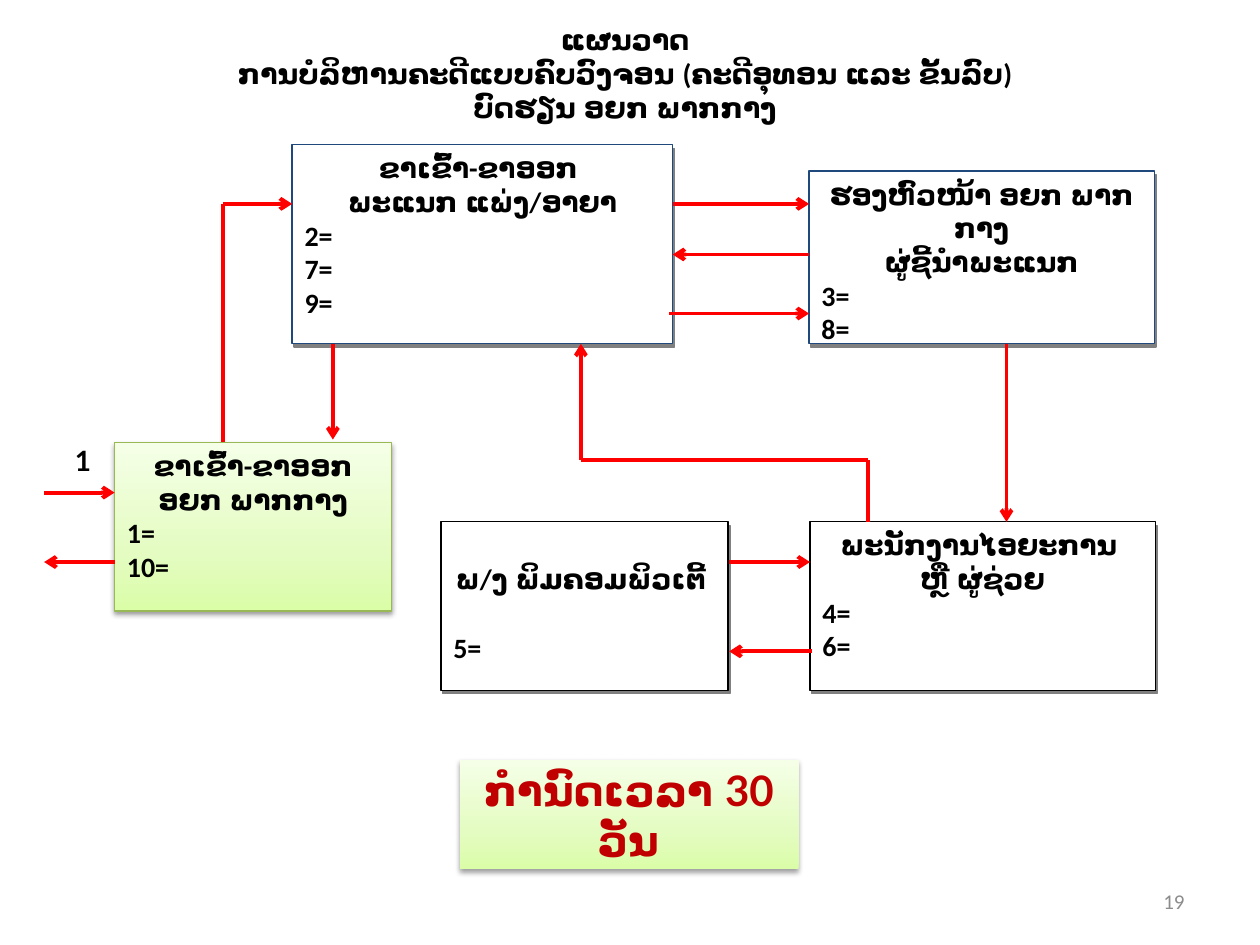
import pptx
import pptx.dml.color
import pptx.enum.shapes
import pptx.enum.text
import pptx.oxml.ns
import pptx.util
from itertools import pairwise
from lxml import etree

Cm, Pt = pptx.util.Cm, pptx.util.Pt
RGBColor = pptx.dml.color.RGBColor
SHAPE = pptx.enum.shapes.MSO_SHAPE
ALIGN = pptx.enum.text.PP_ALIGN
ANCHOR = pptx.enum.text.MSO_ANCHOR
qn = pptx.oxml.ns.qn

BLACK = RGBColor(0x00, 0x00, 0x00)
WHITE = RGBColor(0xFF, 0xFF, 0xFF)
NAVY = RGBColor(0x1F, 0x49, 0x7D)
RED = RGBColor(0xFF, 0x00, 0x00)
DARK_RED = RGBColor(0xC0, 0x00, 0x00)
OLIVE = RGBColor(0x98, 0xB9, 0x55)
GRAY = RGBColor(0x80, 0x80, 0x80)
NUMBER_GRAY = RGBColor(0x8C, 0x8C, 0x8C)
# Green gradient, bottom to top: position in percent, colour
GREEN_STOPS = [
    (0, RGBColor(0xDA, 0xFD, 0xA7)),
    (35, RGBColor(0xE4, 0xFC, 0xC2)),
    (100, RGBColor(0xF5, 0xFF, 0xE7)),
]
# Shadow: colour, opacity percent, blur pt, distance pt, angle
SOFT_SHADOW = (BLACK, 38, 3.1, 1.6, 90)
HARD_SHADOW = (GRAY, 100, 0, 2.2, 63)

# Content; all positions in centimetres (left, top, width, height)
TITLE = ("ແຜນວາດ\vການບໍລິຫານຄະດີແບບຄົບວົງຈອນ (ຄະດີອຸທອນ ແລະ ຂັ້ນລົບ)\v"
         "ບົດຮຽນ ອຍກ ພາກກາງ")
TITLE_AREA = (3.1, 0.53, 19, 2.59)

# Boxes: area, border, green or white, centred headings, numbered steps
BOXES = [
    ((2.31, 8.92, 5.59, 3.4), OLIVE, True,
     ["ຂາເຂົ້າ-ຂາອອກ", "ອຍກ ພາກກາງ"], ["1=", "10="]),
    ((5.89, 2.92, 7.67, 4.01), NAVY, False,
     ["ຂາເຂົ້າ-ຂາອອກ ", "ພະແນກ ແພ່ງ/ອາຍາ"], ["2=", "7=", "9="]),
    ((16.33, 10.52, 6.96, 3.4), BLACK, False,
     ["ພະນັກງານໄອຍະການ ", "ຫຼື ຜູ່ຊ່ວຍ"], ["4=", "6="]),
    ((16.31, 3.45, 6.96, 3.48), NAVY, False,
     ["ຮອງຫົວໜ້າ ອຍກ ພາກກາງ", "ຜູ່ຊີ້ນໍາພະແນກ"], ["3=", "8="]),
    ((8.89, 10.52, 5.79, 3.4), BLACK, False,
     ["ພ/ງ ພິມຄອມພິວເຕີ້ "], ["5="]),
]

# Routes: corner points, the last one carries the arrowhead
ROUTES = [
    [(4.5, 8.92), (4.5, 4.11), (5.89, 4.11)],
    [(17.5, 10.52), (17.5, 9.27), (11.71, 9.27), (11.71, 6.93)],
    [(20.29, 6.93), (20.29, 10.52)],
    [(6.71, 6.93), (6.71, 8.86)],
    [(13.56, 4.11), (16.31, 4.11)],
    [(16.31, 5.13), (13.56, 5.13)],
    [(13.49, 6.32), (16.31, 6.32)],
    [(0.89, 9.93), (2.31, 9.93)],
    [(2.31, 11.33), (0.89, 11.33)],
    [(14.7, 11.33), (16.33, 11.33)],
    [(16.36, 13.13), (14.7, 13.13)],
]


def write(shape, lines, size, color, font="Calibri", bold=True,
          anchor=ANCHOR.MIDDLE):
    """Fill a shape with (text, alignment) lines in one style."""
    frame = shape.text_frame
    frame.word_wrap = True
    frame.vertical_anchor = anchor
    for index, (text, alignment) in enumerate(lines):
        paragraph = frame.add_paragraph() if index else frame.paragraphs[0]
        paragraph.text = text
        paragraph.alignment = alignment
        paragraph.font.name = font
        paragraph.font.size = Pt(size)
        paragraph.font.bold = bold
        paragraph.font.color.rgb = color
    return frame


def add_color(parent, color):
    return etree.SubElement(parent, qn("a:srgbClr"), val=str(color))


def add_shadow(shape, color, opacity, blur, distance, angle):
    shape.shadow.inherit = False
    effects = shape.element.spPr.find(qn("a:effectLst"))
    outer = etree.SubElement(
        effects, qn("a:outerShdw"), blurRad=str(Pt(blur)), dist=str(Pt(distance)),
        dir=str(angle * 60000), algn="ctr", rotWithShape="0")
    etree.SubElement(add_color(outer, color), qn("a:alpha"), val=str(opacity * 1000))


def add_panel(shapes, area, border, green):
    panel = shapes.add_shape(SHAPE.RECTANGLE, *map(Cm, area))
    if green:
        panel.fill.gradient()
        panel.fill.gradient_angle = 90
        stops = panel.element.spPr.find(".//" + qn("a:gsLst"))
        stops.clear()
        for position, color in GREEN_STOPS:
            add_color(etree.SubElement(stops, qn("a:gs"), pos=str(position * 1000)),
                      color)
    else:
        panel.fill.solid()
        panel.fill.fore_color.rgb = WHITE
    if border is None:
        panel.line.fill.background()
    else:
        panel.line.color.rgb = border
        panel.line.width = Pt(0.75)
    add_shadow(panel, *(SOFT_SHADOW if green else HARD_SHADOW))
    return panel


def add_route(shapes, points):
    for start, end in pairwise(points):
        connector = shapes.add_connector(
            pptx.enum.shapes.MSO_CONNECTOR.STRAIGHT, *map(Cm, start + end))
        connector.line.color.rgb = RED
        connector.line.width = Pt(2.25)
        properties = connector.element.spPr
        if end == points[-1]:
            etree.SubElement(properties.find(qn("a:ln")), qn("a:tailEnd"), type="arrow")
        etree.SubElement(properties, qn("a:effectLst"))


def main():
    presentation = pptx.Presentation()
    presentation.slide_width, presentation.slide_height = Cm(25.4), Cm(19.05)
    slide = presentation.slides.add_slide(presentation.slide_layouts[6])
    shapes = slide.shapes

    # Title, raised a little above the middle of its area
    title = shapes.add_textbox(*map(Cm, TITLE_AREA))
    frame = write(title, [(TITLE, ALIGN.CENTER)], 16.2, BLACK)
    frame.margin_top, frame.margin_bottom = Cm(0), Cm(0.69)

    # Process boxes
    for area, border, green, headings, steps in BOXES:
        panel = add_panel(shapes, area, border, green)
        lines = [(text, ALIGN.CENTER) for text in headings]
        lines += [(text, ALIGN.LEFT) for text in steps]
        frame = write(panel, lines, 16, BLACK, anchor=ANCHOR.TOP)
        if len(headings) == 1:
            frame.margin_top = Cm(0.8)
            frame.paragraphs[1].space_before = Pt(20)

    # Arrows between the boxes
    for points in ROUTES:
        add_route(shapes, points)

    # Label of the entry arrow
    label = shapes.add_shape(SHAPE.OVAL, Cm(1.04), Cm(8.74), Cm(1.27), Cm(1.07))
    label.fill.background()
    label.line.fill.background()
    label.shadow.inherit = False
    write(label, [("1", ALIGN.CENTER)], 16, BLACK, font="Lato")

    # Time limit
    limit = add_panel(shapes, (9.27, 15.32, 6.83, 2.21), None, True)
    write(limit, [("ກໍານົດເວລາ 30 ວັນ", ALIGN.CENTER)], 24, DARK_RED, font="Lato")

    # Slide number
    number = shapes.add_textbox(Cm(18.21), Cm(17.65), Cm(5.92), Cm(1.02))
    write(number, [("19", ALIGN.RIGHT)], 12, NUMBER_GRAY, bold=False)

    presentation.save("out.pptx")


if __name__ == "__main__":
    main()
